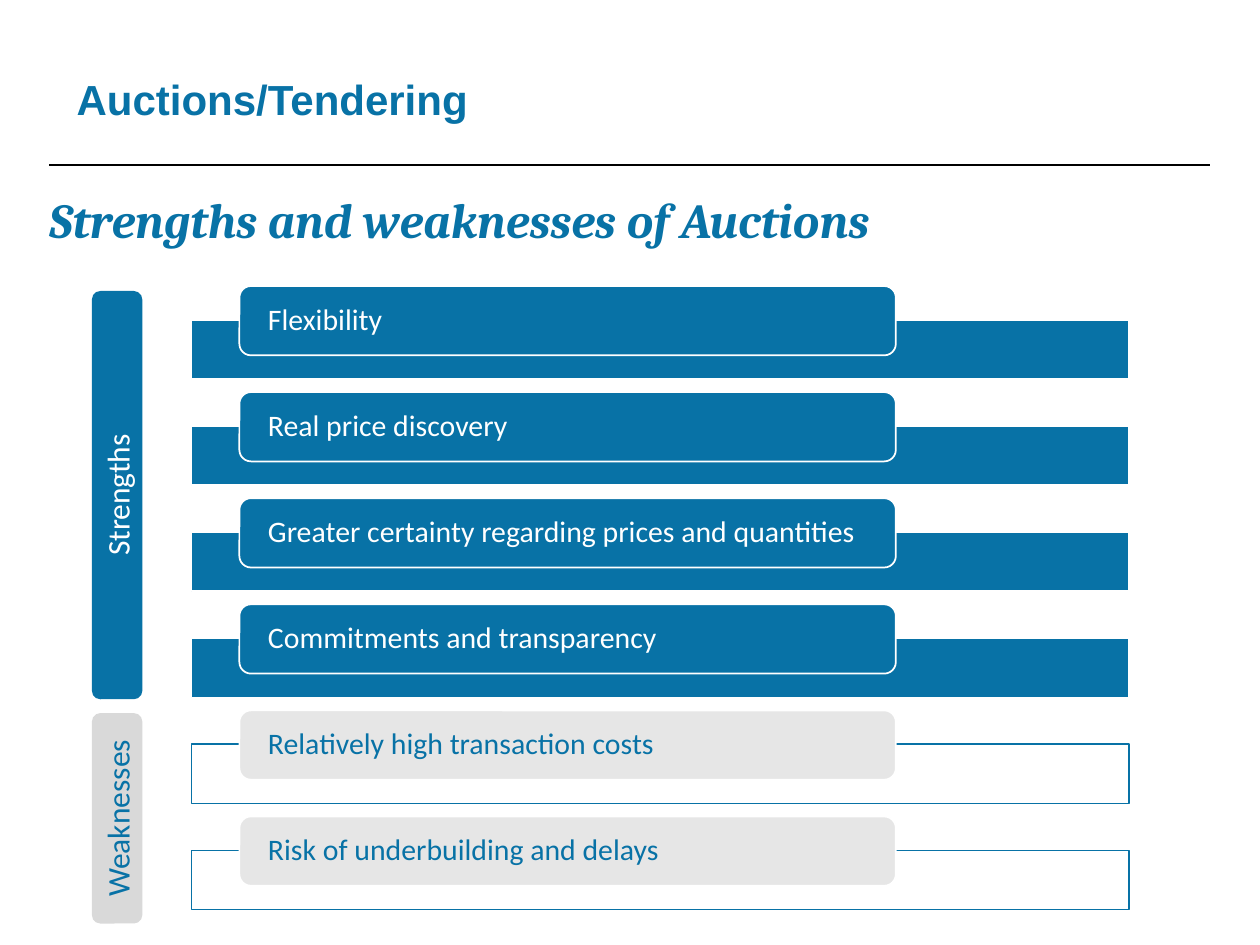
from lxml import etree
from pptx import Presentation
from pptx.dml.color import RGBColor
from pptx.enum.shapes import MSO_CONNECTOR, MSO_SHAPE
from pptx.enum.text import MSO_ANCHOR, PP_ALIGN
from pptx.oxml.ns import qn
from pptx.util import Inches, Pt

RECT = MSO_SHAPE.RECTANGLE
ROUNDED = MSO_SHAPE.ROUNDED_RECTANGLE
STRAIGHT = MSO_CONNECTOR.STRAIGHT
MIDDLE = MSO_ANCHOR.MIDDLE
LEFT, CENTER = PP_ALIGN.LEFT, PP_ALIGN.CENTER

BLUE, WHITE, BLACK = "0872A6", "FFFFFF", "000000"
PALE_GRAY, GRAY = "E6E6E6", "D9D9D9"

STRENGTHS = [
    "Flexibility",
    "Real price discovery",
    "Greater certainty regarding prices and quantities",
    "Commitments and transparency",
]
WEAKNESSES = [
    "Relatively high transaction costs",
    "Risk of underbuilding and delays",
]
FIRST_TOP, LAST_TOP = 2.27, 6.48


def rgb(value):
    return RGBColor.from_string(value)


class SlideBuilder:
    font = "Calibri"

    def __init__(self, slide):
        self.shapes = slide.shapes

    def set_text(self, sp, text, size, color, font=None, bold=False,
                 italic=False, align=LEFT, inset=(0.1, 0.05), spacing=1.0):
        tf = sp.text_frame
        tf.word_wrap = True
        tf.vertical_anchor = MIDDLE
        tf.margin_left = tf.margin_right = Inches(inset[0])
        tf.margin_top = tf.margin_bottom = Inches(inset[1])
        p = tf.paragraphs[0]
        p.text = text
        p.alignment = align
        p.line_spacing = spacing
        p.font.name = font or self.font
        p.font.size = Pt(size)
        p.font.bold = bold
        p.font.italic = italic
        p.font.color.rgb = rgb(color)

    def text(self, box, text, size, color, **style):
        sp = self.shapes.add_textbox(*map(Inches, box))
        self.set_text(sp, text, size, color, **style)

    def shape(self, kind, box, fill, line=None):
        sp = self.shapes.add_shape(kind, *map(Inches, box))
        sp.shadow.inherit = False
        sp.fill.solid()
        sp.fill.fore_color.rgb = rgb(fill)
        if line:
            sp.line.color.rgb = rgb(line)
            sp.line.width = Pt(1)
        else:
            sp.line.fill.background()
        return sp

    def rule(self, x1, x2, y):
        line = self.shapes.add_connector(
            STRAIGHT, Inches(x1), Inches(y), Inches(x2), Inches(y))
        line.line.color.rgb = rgb(BLACK)
        line.line.width = Pt(0.75)
        etree.SubElement(line.element.spPr, qn("a:effectLst"))

    def item(self, top, text, bar_fill, bar_line, label_fill, color):
        """Draw a wide bar with a rounded label overlapping its top edge."""
        self.shape(RECT, (1.52, top + 0.27, 7.44, 0.47), bar_fill, bar_line)
        label = self.shape(ROUNDED, (1.9, top, 5.21, 0.55), label_fill, WHITE)
        self.set_text(label, text, 17, color, inset=(0.2, 0), spacing=0.9)

    def side_label(self, top, height, text, fill, color):
        """Draw a rounded tab whose text reads upwards."""
        sp = self.shape(ROUNDED, (0.73, top, 0.4, height), fill)
        self.set_text(sp, text, 18, color, align=CENTER)
        sp.element.txBody.find(qn("a:bodyPr")).set("vert", "vert270")


def main():
    prs = Presentation()
    prs.slide_width, prs.slide_height = Inches(10), Inches(7.5)
    s = SlideBuilder(prs.slides.add_slide(prs.slide_layouts[6]))

    s.rule(0.39, 9.6, 1.31)
    s.text((0.51, 0.52, 9.09, 0.53), "Auctions/Tendering", 24, BLUE,
           font="Arial", bold=True)
    s.text((0.39, 1.47, 9.21, 0.53), "Strengths and weaknesses of Auctions",
           28, BLUE, font="Cambria", bold=True, italic=True, inset=(0, 0))

    items = [(text, BLUE, WHITE, BLUE, WHITE) for text in STRENGTHS]
    items += [(text, WHITE, BLUE, PALE_GRAY, BLUE) for text in WEAKNESSES]
    pitch = (LAST_TOP - FIRST_TOP) / (len(items) - 1)
    for i, item in enumerate(items):
        s.item(FIRST_TOP + i * pitch, *item)

    s.side_label(2.31, 3.24, "Strengths", BLUE, WHITE)
    s.side_label(5.66, 1.67, "Weaknesses", GRAY, BLUE)

    prs.save("out.pptx")


if __name__ == "__main__":
    main()
